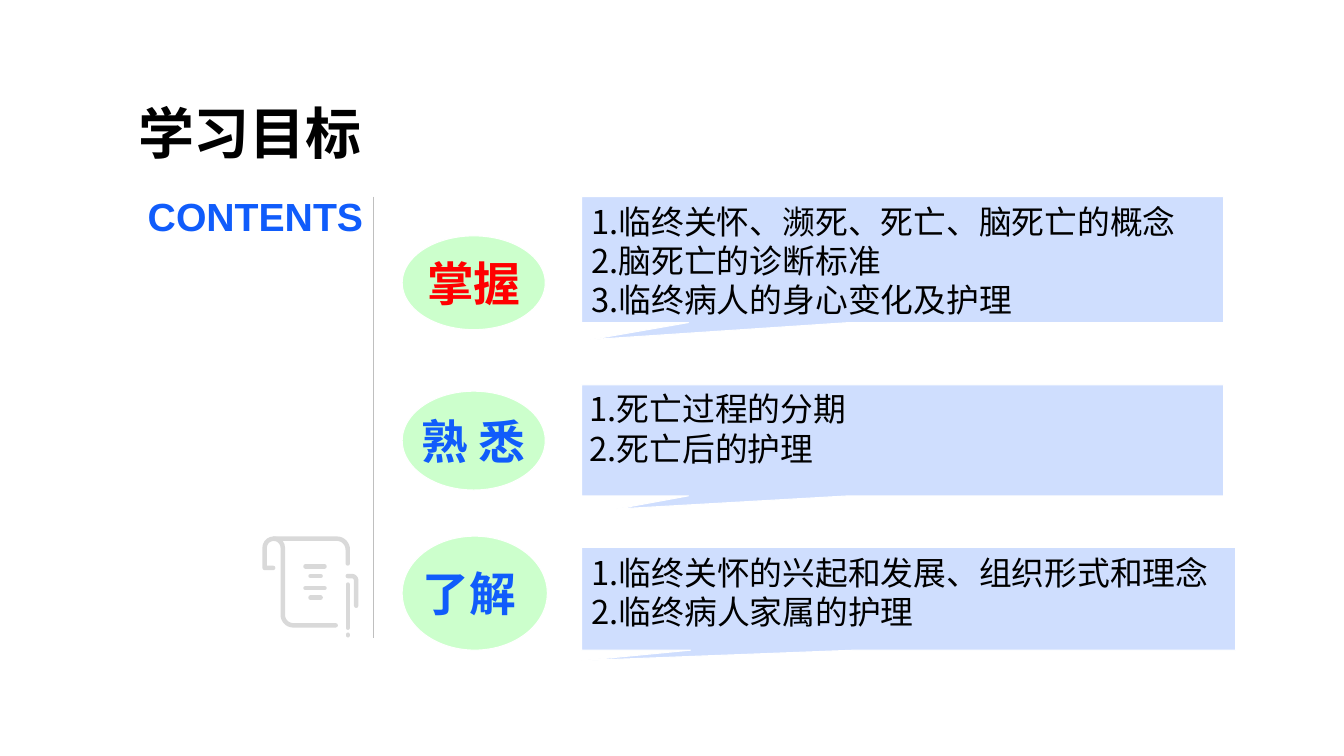
from dataclasses import dataclass
from math import cos, radians, sin

from lxml.etree import SubElement
from pptx import Presentation
from pptx.dml.color import RGBColor
from pptx.enum.shapes import MSO_CONNECTOR as Connector, MSO_SHAPE as Shape
from pptx.enum.text import MSO_ANCHOR as Anchor, MSO_AUTO_SIZE as AutoSize, PP_ALIGN as Align
from pptx.oxml.ns import qn
from pptx.util import Pt


@dataclass(frozen=True)
class Theme:
    """Colours, fonts and type sizes of the slide."""
    black: str = "000000"
    white: str = "FFFFFF"
    red: str = "FF0000"
    blue: str = "105CFB"
    pale_blue: str = "CFDEFE"
    pale_green: str = "CCFFCC"
    rule_grey: str = "BFBFBF"
    icon_grey: str = "D9D9D9"
    latin: str = "Arial"
    chinese: str = "Noto Sans CJK SC"
    title_size: float = 40
    subtitle_size: float = 28
    label_size: float = 33.4
    list_size: float = 23.4


@dataclass(frozen=True)
class Goal:
    """One level of learning: its label, its list and their places."""
    label: str
    color: str
    oval: tuple
    callout: tuple
    pointer: tuple
    items: tuple
    insets: tuple = (7.2, 3.6)
    label_right: float = 7.2


THEME = Theme()
GOALS = (
    Goal("掌握", THEME.red, (168.5, 102.2, 67), (140.4, 458.6, 90), (-0.486, 0.636),
         ("1.临终关怀、濒死、死亡、脑死亡的概念", "2.脑死亡的诊断标准",
          "3.临终病人的身心变化及护理")),
    Goal("熟 悉", THEME.blue, (279.4, 102.2, 70.6), (275, 458.6, 79.2), (-0.445, 0.619),
         ("1.死亡过程的分期", "2.死亡后的护理"), insets=(5.8, 2.9)),
    Goal("了解", THEME.blue, (383, 103.7, 81.4), (391, 467.3, 73.4), (-0.5, 0.602),
         ("1.临终关怀的兴起和发展、组织形式和理念", "2.临终病人家属的护理"),
         label_right=14.7),
)
OVAL_LEFT, CALLOUT_LEFT = 287.3, 415.4


def rgb(color):
    """Turn a hex string into a colour."""
    return RGBColor.from_string(color)


def write(shape, lines, size, color, font, bold=False, align=Align.LEFT):
    """Write one paragraph per line in a single style."""
    frame = shape.text_frame
    frame.text = "\n".join(lines)
    for paragraph in frame.paragraphs:
        paragraph.alignment = align
        paragraph.font.size = Pt(size)
        paragraph.font.bold = bold
        paragraph.font.color.rgb = rgb(color)
        paragraph.font.name = font
        defaults = paragraph._p.pPr.find(qn("a:defRPr"))
        SubElement(defaults, qn("a:ea"), typeface=THEME.chinese)


def add_panel(slide, kind, box, fill, line=None):
    """Add a filled shape, outlined only when a line colour is given."""
    shape = slide.shapes.add_shape(kind, *map(Pt, box))
    shape.shadow.inherit = False
    shape.fill.solid()
    shape.fill.fore_color.rgb = rgb(fill)
    if line:
        shape.line.color.rgb = rgb(line)
        shape.line.width = Pt(0.75)
    else:
        shape.line.fill.background()
    return shape


def set_title(slide, text):
    """Move and format the title placeholder."""
    title = slide.shapes.title
    title.left, title.top, title.width, title.height = map(Pt, (91.4, 67, 174.2, 55.4))
    write(title, [text], THEME.title_size, THEME.black, THEME.latin, bold=True)
    frame = title.text_frame
    frame.word_wrap = False
    frame.auto_size = AutoSize.NONE
    frame.margin_right = 0
    frame.vertical_anchor = Anchor.TOP


def add_divider(slide, x, top, bottom):
    """Add the thin vertical rule."""
    divider = slide.shapes.add_connector(
        Connector.STRAIGHT, Pt(x), Pt(top), Pt(x), Pt(bottom))
    divider.line.color.rgb = rgb(THEME.rule_grey)
    divider.line.width = Pt(0.25)
    SubElement(divider._element.spPr, qn("a:effectLst"))


def add_subtitle(slide, text):
    """Add the white box with the English heading."""
    box = add_panel(slide, Shape.RECTANGLE, (59.8, 133.9, 206.6, 41), THEME.white)
    write(box, [text], THEME.subtitle_size, THEME.blue, THEME.latin, True, Align.RIGHT)
    box.text_frame.vertical_anchor = Anchor.TOP
    box.text_frame.auto_size = AutoSize.SHAPE_TO_FIT_TEXT


def arc(x, y, radius, start, end, steps=10):
    """List points on an arc around a centre, angles in degrees."""
    angles = [radians(start + (end - start) * step / steps) for step in range(steps + 1)]
    return [(x + radius * cos(angle), y + radius * sin(angle)) for angle in angles]


def add_scroll_icon(slide):
    """Draw the scroll as round-ended strokes in one freeform."""
    strokes = [
        [(195.1, 405.7), (189, 405.7), *arc(195.5, 391.3, 6.5, 180, 360),
         *arc(209.5, 439.2, 7.5, 180, 90), (239.8, 446.7)],
        [(195.5, 384.8), *arc(240.6, 392.6, 7.8, 270, 360), (248.4, 402.5)],
        [(248.4, 411.5), *arc(251.2, 414.7, 3.2, 270, 360), (254.4, 432.7)],
        [(248.4, 417.6), (248.4, 448.4)],
        [(248.4, 453.4), (248.4, 453.8)],
    ]
    for y in (404.6, 420.1):
        strokes.append([(218.2, y), (231.8, y)])
        strokes.append([(221.8, y + 6.9), (229, y + 6.9)])
    strokes = [[(x * 100, y * 100) for x, y in stroke] for stroke in strokes]
    builder = slide.shapes.build_freeform(*strokes[0][0], scale=Pt(0.01))
    builder.add_line_segments(strokes[0][1:], close=False)
    for start, *others in strokes[1:]:
        builder.move_to(*start)
        builder.add_line_segments(others, close=False)
    icon = builder.convert_to_shape()
    icon.shadow.inherit = False
    icon.fill.background()
    icon.line.color.rgb = rgb(THEME.icon_grey)
    icon.line.width = Pt(3.2)
    icon.line._get_or_add_ln().set("cap", "rnd")


def add_goal(slide, goal):
    """Add a labelled oval and the callout with its list."""
    oval = add_panel(slide, Shape.OVAL, (OVAL_LEFT, *goal.oval),
                     THEME.pale_green, THEME.white)
    write(oval, [goal.label], THEME.label_size, goal.color, THEME.chinese,
          True, Align.CENTER)
    oval.text_frame.word_wrap = False
    oval.text_frame.vertical_anchor = Anchor.MIDDLE
    oval.text_frame.margin_right = Pt(goal.label_right)

    callout = add_panel(slide, Shape.RECTANGULAR_CALLOUT, (CALLOUT_LEFT, *goal.callout),
                        THEME.pale_blue, THEME.white)
    callout.adjustments[0], callout.adjustments[1] = goal.pointer
    write(callout, goal.items, THEME.list_size, THEME.black, THEME.chinese)
    frame = callout.text_frame
    frame.vertical_anchor = Anchor.TOP
    frame.margin_left = frame.margin_right = Pt(goal.insets[0])
    frame.margin_top = frame.margin_bottom = Pt(goal.insets[1])


def main():
    """Build the learning goals slide and save it."""
    presentation = Presentation()
    presentation.slide_width, presentation.slide_height = Pt(960), Pt(540)
    slide = presentation.slides.add_slide(presentation.slide_layouts[5])
    set_title(slide, "学习目标")
    add_divider(slide, 266.4, 140.4, 455.8)
    add_subtitle(slide, "CONTENTS")
    add_scroll_icon(slide)
    for goal in GOALS:
        add_goal(slide, goal)
    presentation.save("out.pptx")


if __name__ == "__main__":
    main()
